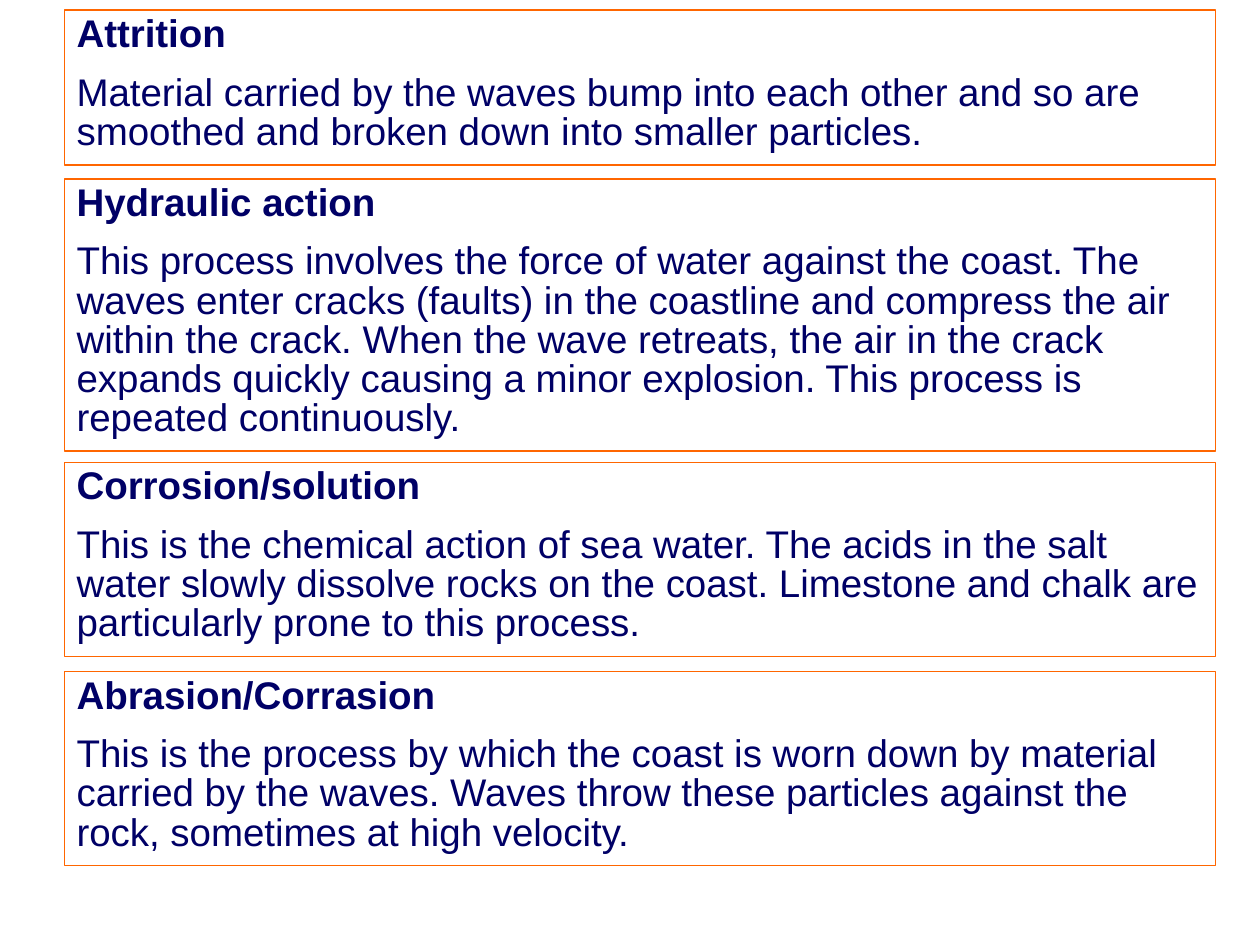
from dataclasses import dataclass
from pptx import Presentation
from pptx.dml.color import RGBColor
from pptx.enum.shapes import MSO_SHAPE
from pptx.enum.text import MSO_ANCHOR, MSO_AUTO_SIZE, PP_ALIGN
from pptx.util import Inches, Pt


@dataclass(frozen=True)
class Theme:
    font: str = "Arial"
    size: float = 22
    gap: float = 11
    lead: float = 0.85
    rule: float = 0.75
    ink: RGBColor = RGBColor(0x00, 0x00, 0x66)
    edge: RGBColor = RGBColor(0xFF, 0x66, 0x00)
    back: RGBColor = RGBColor(0xFF, 0xFF, 0xFF)


THEME = Theme()
WIDE, HIGH = 10, 7.5
LEFT, SPAN = 0.051 * WIDE, 0.914 * WIDE
BASE, ROW = 0.61, 0.31

CARDS = [
    (0.08, 2, "Attrition",
     "Material carried by the waves bump into each other and so are "
     "smoothed and broken down into smaller particles."),
    (1.42, 5, "Hydraulic action",
     "This process involves the force of water against the coast. The "
     "waves enter cracks (faults) in the coastline and compress the air "
     "within the crack. When the wave retreats, the air in the crack "
     "expands quickly causing a minor explosion. This process is "
     "repeated continuously."),
    (3.67, 3, "Corrosion/solution",
     "This is the chemical action of sea water. The acids in the salt "
     "water slowly dissolve rocks on the coast. Limestone and chalk are "
     "particularly prone to this process."),
    (5.33, 3, "Abrasion/Corrasion",
     "This is the process by which the coast is worn down by material "
     "carried by the waves. Waves throw these particles against the "
     "rock, sometimes at high velocity."),
]


def add_text(para, text, bold):
    para.alignment = PP_ALIGN.LEFT
    para.line_spacing = THEME.lead
    para.space_before = Pt(THEME.gap)
    run = para.add_run()
    run.text = text
    font = run.font
    font.name, font.size, font.bold = THEME.font, Pt(THEME.size), bold
    font.color.rgb = THEME.ink


def add_card(slide, box, title, body):
    card = slide.shapes.add_shape(MSO_SHAPE.RECTANGLE, *map(Inches, box))
    card.shadow.inherit = False
    card.fill.solid()
    card.fill.fore_color.rgb = THEME.back
    card.line.color.rgb = THEME.edge
    card.line.width = Pt(THEME.rule)
    frame = card.text_frame
    frame.word_wrap = True
    frame.auto_size = MSO_AUTO_SIZE.SHAPE_TO_FIT_TEXT
    frame.vertical_anchor = MSO_ANCHOR.TOP
    add_text(frame.paragraphs[0], title, True)
    add_text(frame.add_paragraph(), body, False)


def main():
    deck = Presentation()
    deck.slide_width, deck.slide_height = Inches(WIDE), Inches(HIGH)
    slide = deck.slides.add_slide(deck.slide_layouts[6])
    for top, rows, title, body in CARDS:
        add_card(slide, (LEFT, top, SPAN, BASE + ROW * rows), title, body)
    deck.save("out.pptx")


if __name__ == "__main__":
    main()
